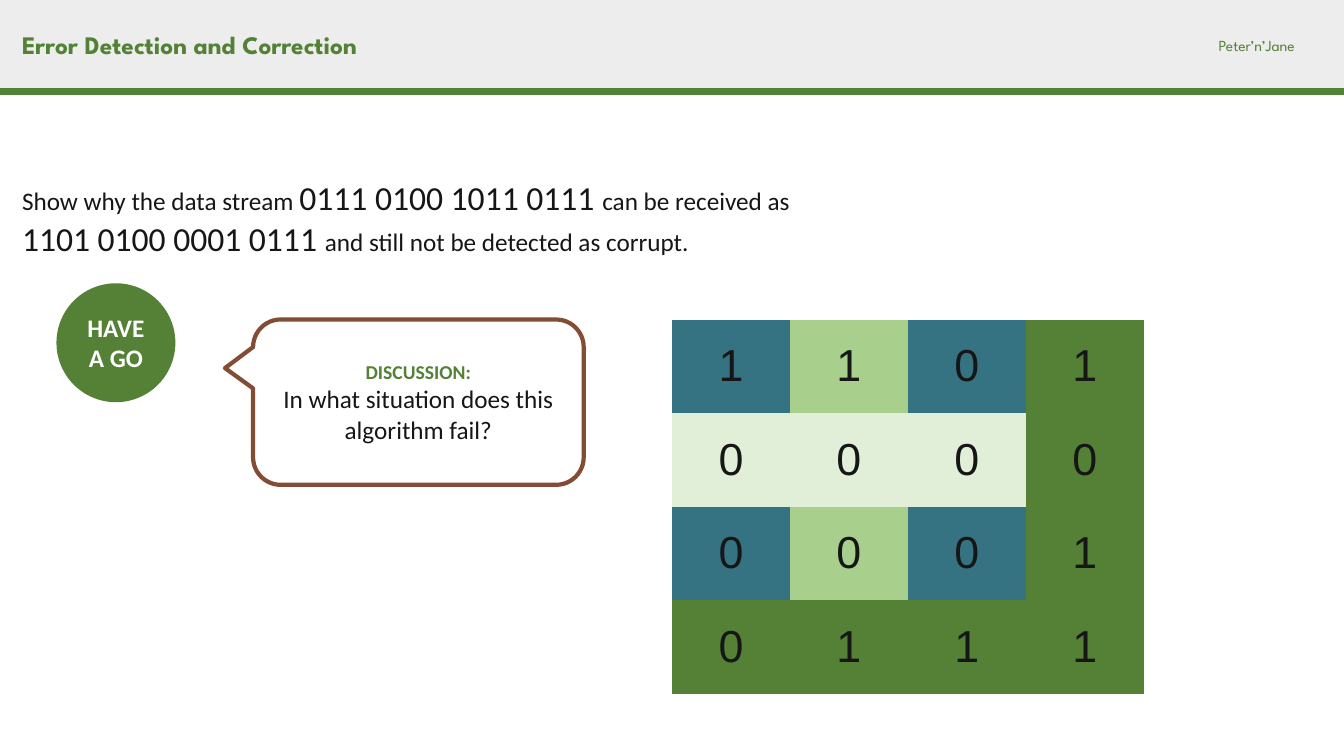
"""Build the slide on error detection with a parity grid."""
from dataclasses import dataclass

from lxml import etree
from pptx import Presentation
from pptx.dml.color import RGBColor
from pptx.enum.shapes import MSO_CONNECTOR, MSO_SHAPE
from pptx.enum.text import MSO_ANCHOR, PP_ALIGN
from pptx.oxml.ns import qn
from pptx.util import Inches, Pt

RECTANGLE, CIRCLE = MSO_SHAPE.RECTANGLE, MSO_SHAPE.OVAL
CALLOUT = MSO_SHAPE.ROUNDED_RECTANGULAR_CALLOUT
STRAIGHT = MSO_CONNECTOR.STRAIGHT
LEFT, CENTER = PP_ALIGN.LEFT, PP_ALIGN.CENTER
MIDDLE = MSO_ANCHOR.MIDDLE

WIDTH, HEIGHT = Inches(13.333), Inches(7.5)
BAND_PERCENT = 12.1
HEADING_GREEN, GREEN, INK = "538135", "548135", "171616"
TEAL, LIGHT_GREEN, PALE_GREEN = "357382", "A8D08C", "E1EFD8"
WHITE, GREY, BROWN = "FFFFFF", "EDEDED", "824C35"
HEADING_FONT, BODY_FONT, GRID_FONT = "League Spartan", "Calibri", "Arial"

BITS = ("1101", "0000", "0001", "0111")
FILLS = (
    (TEAL, LIGHT_GREEN, TEAL, GREEN),
    (PALE_GREEN, PALE_GREEN, PALE_GREEN, GREEN),
    (TEAL, LIGHT_GREEN, TEAL, GREEN),
    (GREEN, GREEN, GREEN, GREEN),
)
GRID_LEFT, GRID_TOP, GRID_COLUMN, GRID_ROW = 50, 42.27, 8.78, 12.37


@dataclass(frozen=True)
class Span:
    text: str
    size: float
    color: str = INK
    bold: bool = False
    font: str = BODY_FONT
    break_before: bool = False


@dataclass(frozen=True)
class Area:
    left: float
    top: float
    width: float
    height: float

    def lengths(self):
        return across(self.left), down(self.top), across(self.width), down(self.height)


@dataclass(frozen=True)
class Label:
    area: Area
    spans: tuple[Span, ...]


@dataclass(frozen=True)
class Panel:
    kind: int
    area: Area
    fill: str
    paragraphs: tuple[tuple[Span, ...], ...] = ()
    line: str = ""
    adjustments: tuple[float, ...] = ()


LABELS = (
    Label(Area(0.9, 3.2, 29.33, 5.33),
          (Span("Error Detection and Correction", 18, HEADING_GREEN, True, HEADING_FONT),)),
    Label(Area(89.93, 4.13, 9.15, 3.87),
          (Span("Peter’n’Jane", 11, HEADING_GREEN, font=HEADING_FONT),)),
    Label(Area(0.9, 22.8, 97.05, 12.13), (
        Span("Show why the data stream ", 18),
        Span("0111 0100 1011 0111 ", 24),
        Span("can be received as", 18),
        Span("1101 0100 0001 0111 ", 24, break_before=True),
        Span("and still not be detected as corrupt.", 18),
    )),
)
BAND = Panel(RECTANGLE, Area(0, 0, 100, BAND_PERCENT), GREY)
PANELS = (
    Panel(CALLOUT, Area(18.83, 42.27, 24.6, 21.87), WHITE, (
        (Span("DISCUSSION:", 14, HEADING_GREEN, True),),
        (Span("In what situation does this algorithm fail?", 18),),
    ), BROWN, (-0.585, -0.206, 0.167)),
    Panel(CIRCLE, Area(4.2, 37.47, 8.85, 15.73), GREEN,
          ((Span("HAVE A GO", 18, WHITE, True),),)),
)


def across(percent: float) -> int:
    return round(WIDTH * percent / 100)


def down(percent: float) -> int:
    return round(HEIGHT * percent / 100)


def paint(color_format, color: str) -> None:
    color_format.rgb = RGBColor.from_string(color)


def fill_solid(fill, color: str) -> None:
    fill.solid()
    paint(fill.fore_color, color)


def write(para, spans: tuple[Span, ...], alignment=LEFT) -> None:
    para.alignment = alignment
    for span in spans:
        if span.break_before:
            para.add_line_break()
        run = para.add_run()
        run.text = span.text
        run.font.size = Pt(span.size)
        run.font.bold = span.bold
        run.font.name = span.font
        paint(run.font.color, span.color)


def draw_label(page, label: Label) -> None:
    box = page.shapes.add_textbox(*label.area.lengths())
    box.text_frame.word_wrap = True
    write(box.text_frame.paragraphs[0], label.spans)


def draw_panel(page, panel: Panel) -> None:
    shape = page.shapes.add_shape(panel.kind, *panel.area.lengths())
    shape.shadow.inherit = False
    for index, value in enumerate(panel.adjustments):
        shape.adjustments[index] = value
    fill_solid(shape.fill, panel.fill)
    if panel.line:
        paint(shape.line.color, panel.line)
        shape.line.width = Pt(3)
    else:
        shape.line.fill.background()
    frame = shape.text_frame
    frame.word_wrap = True
    frame.vertical_anchor = MIDDLE
    for index, spans in enumerate(panel.paragraphs):
        para = frame.add_paragraph() if index else frame.paragraphs[0]
        write(para, spans, CENTER)


def draw_rule(page) -> None:
    height = down(BAND_PERCENT)
    rule = page.shapes.add_connector(STRAIGHT, 0, height, WIDTH, height)
    paint(rule.line.color, HEADING_GREEN)
    rule.line.width = Pt(4.5)
    etree.SubElement(rule._element.spPr, qn("a:effectLst"))


def clear_borders(cell) -> None:
    properties = cell._tc.get_or_add_tcPr()
    for side in ("a:lnL", "a:lnR", "a:lnT", "a:lnB"):
        border = etree.SubElement(properties, qn(side), w="0")
        etree.SubElement(border, qn("a:noFill"))


def draw_parity_grid(page) -> None:
    rows, columns = len(BITS), len(BITS[0])
    area = Area(GRID_LEFT, GRID_TOP, GRID_COLUMN * columns, GRID_ROW * rows)
    table = page.shapes.add_table(rows, columns, *area.lengths()).table
    table.first_row = table.horz_banding = False
    for column in table.columns:
        column.width = across(GRID_COLUMN)
    for row, bits, fills in zip(table.rows, BITS, FILLS):
        row.height = down(GRID_ROW)
        for cell, bit, color in zip(row.cells, bits, fills):
            clear_borders(cell)
            fill_solid(cell.fill, color)
            cell.vertical_anchor = MIDDLE
            write(cell.text_frame.paragraphs[0], (Span(bit, 32, font=GRID_FONT),), CENTER)


def main() -> None:
    deck = Presentation()
    deck.slide_width, deck.slide_height = WIDTH, HEIGHT
    page = deck.slides.add_slide(deck.slide_layouts[6])
    draw_panel(page, BAND)
    draw_rule(page)
    for label in LABELS:
        draw_label(page, label)
    for panel in PANELS:
        draw_panel(page, panel)
    draw_parity_grid(page)
    deck.save("out.pptx")


if __name__ == "__main__":
    main()
